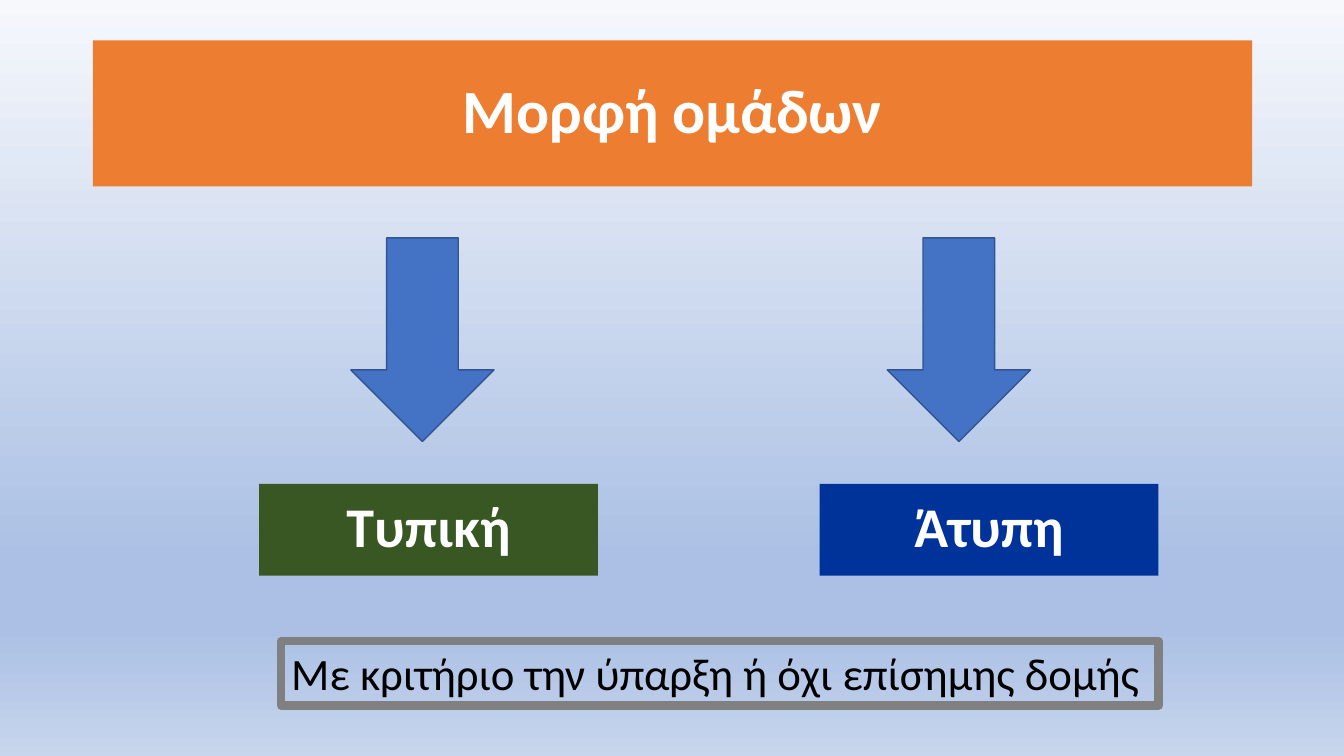
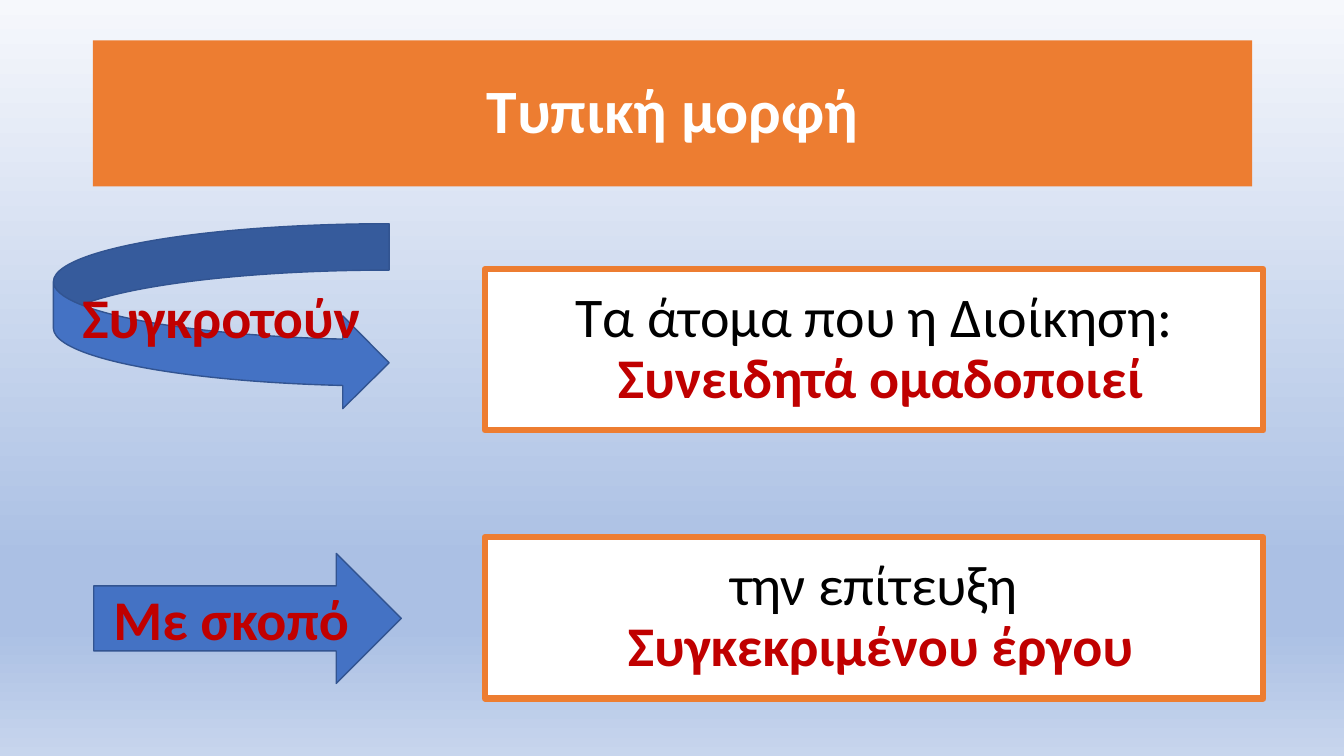
import pptx
import pptx.util
from lxml import etree
from pptx.dml.color import RGBColor
from pptx.enum.shapes import MSO_SHAPE
from pptx.enum.text import MSO_ANCHOR, MSO_AUTO_SIZE, PP_ALIGN
from pptx.oxml.ns import qn
from pptx.util import Inches, Pt

FONT = "Calibri"
COLORS = {
    "orange": "ED7D31", "blue": "4472C4", "blue_edge": "325491",
    "green": "385723", "navy": "003399", "gray": "808080",
    "red": "C00000", "white": "FFFFFF", "black": "000000",
}
BACKGROUND_STOPS = [(0, "F6F8FC"), (74, "ABC0E4"), (83, "ABC0E4"), (100, "C7D5ED")]
TITLE_AREA = (0.92, 0.4, 11.5, 1.45)

GROUPS_TITLE = "Μορφή ομάδων"
# label, fill, left of label, left of arrow
GROUP_FORMS = [
    ("Τυπική", "green", 2.57, 3.48),
    ("Άτυπη", "navy", 8.13, 8.8),
]
CRITERION = "Με κριτήριο την ύπαρξη ή όχι επίσημης δομής"

FORMAL_TITLE = "Τυπική μορφή"
# arrow shape, arrow area, arrow label, card top, plain line, strong line
FORMAL_STEPS = [
    (MSO_SHAPE.CURVED_RIGHT_ARROW, (0.53, 2.22, 3.33, 1.84), "Συγκροτούν",
     2.67, "Τα άτομα που η Διοίκηση:", " Συνειδητά ομαδοποιεί"),
    (MSO_SHAPE.RIGHT_ARROW, (0.93, 5.49, 3.05, 1.29), "Με σκοπό",
     5.33, "την επίτευξη", " Συγκεκριμένου έργου"),
]


def rgb(name):
    return RGBColor.from_string(COLORS[name])


def inches(area):
    return [Inches(value) for value in area]


def set_background(master):
    """Give every slide the vertical gradient through the master."""
    fill = master.background.fill
    fill.gradient()
    gradient = master.element.find(".//" + qn("p:bgPr") + "/" + qn("a:gradFill"))
    stops = gradient.find(qn("a:gsLst"))
    for stop in list(stops):
        stops.remove(stop)
    for position, color in BACKGROUND_STOPS:
        stop = etree.SubElement(stops, qn("a:gs"), pos=str(position * 1000))
        etree.SubElement(stop, qn("a:srgbClr"), val=color)
    gradient.find(qn("a:lin")).set("ang", str(90 * 60000))


def write(shape, lines, size, align=PP_ALIGN.CENTER, spacing=None, indent=0):
    """Fill a shape with paragraphs given as (text, color, bold)."""
    frame = shape.text_frame
    frame.word_wrap = True
    frame.vertical_anchor = MSO_ANCHOR.MIDDLE
    frame.text = "\n".join(text for text, _, _ in lines)
    for para, (_, color, bold) in zip(frame.paragraphs, lines):
        para.alignment = align
        if spacing:
            para.line_spacing = spacing
        if indent:
            properties = para._p.get_or_add_pPr()
            properties.set("marL", str(Inches(indent)))
            properties.set("indent", str(-Inches(indent)))
        for span in para.runs:
            span.font.name = FONT
            span.font.size = Pt(size)
            span.font.bold = bold
            span.font.color.rgb = rgb(color)


def add_block(slide, kind, area, fill, edge=None, width=1):
    shape = slide.shapes.add_shape(kind, *inches(area))
    shape.shadow.inherit = False
    shape.fill.solid()
    shape.fill.fore_color.rgb = rgb(fill)
    if edge:
        shape.line.color.rgb = rgb(edge)
        shape.line.width = Pt(width)
    else:
        shape.line.fill.background()
    return shape


def add_slide(deck, text):
    slide = deck.slides.add_slide(deck.slide_layouts.get_by_name("Title Only"))
    title = slide.shapes.title
    title.left, title.top, title.width, title.height = inches(TITLE_AREA)
    title.fill.solid()
    title.fill.fore_color.rgb = rgb("orange")
    write(title, [(text, "white", True)], 44, spacing=0.9)
    title.text_frame.auto_size = MSO_AUTO_SIZE.NONE
    return slide


def build_groups(deck):
    slide = add_slide(deck, GROUPS_TITLE)
    for label, fill, label_left, arrow_left in GROUP_FORMS:
        add_block(slide, MSO_SHAPE.DOWN_ARROW, (arrow_left, 2.36, 1.42, 2.02),
                  "blue", "blue_edge")
        box = add_block(slide, MSO_SHAPE.RECTANGLE, (label_left, 4.8, 3.36, 0.91), fill)
        write(box, [(label, "white", True)], 40, spacing=0.9)
    note = slide.shapes.add_textbox(*inches((2.79, 6.36, 8.7, 0.64)))
    note.line.color.rgb = rgb("gray")
    note.line.width = Pt(6)
    write(note, [(CRITERION, "black", False)], 32, align=PP_ALIGN.LEFT)
    note.text_frame.vertical_anchor = MSO_ANCHOR.TOP
    note.text_frame.word_wrap = False
    note.text_frame.auto_size = MSO_AUTO_SIZE.SHAPE_TO_FIT_TEXT


def build_formal(deck):
    slide = add_slide(deck, FORMAL_TITLE)
    for kind, area, label, card_top, plain, strong in FORMAL_STEPS:
        card = add_block(slide, MSO_SHAPE.RECTANGLE, (4.81, card_top, 7.72, 1.6),
                         "white", "orange", 4.5)
        write(card, [(plain, "black", False), (strong, "red", True)], 40,
              spacing=0.9, indent=0.25)
        arrow = add_block(slide, kind, area, "blue", "blue_edge")
        write(arrow, [(label, "red", True)], 40)


def main():
    deck = pptx.Presentation()
    deck.slide_width, deck.slide_height = Inches(13.33), Inches(7.5)
    set_background(deck.slide_master)
    build_groups(deck)
    build_formal(deck)
    deck.save("out.pptx")


if __name__ == "__main__":
    main()
